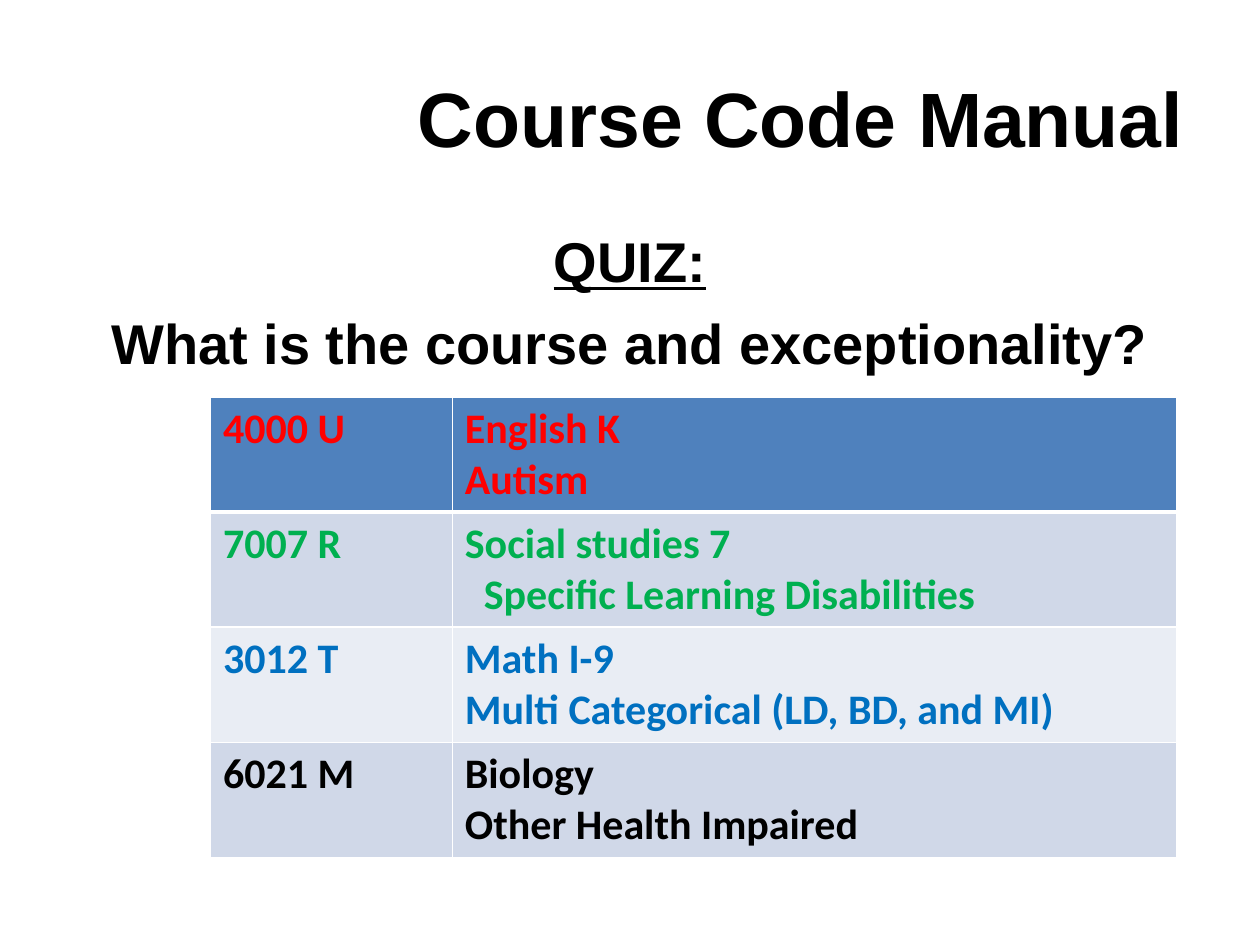
import pptx
import pptx.dml.color
import pptx.enum.text
import pptx.oxml
import pptx.oxml.ns
import pptx.util
from pptx.util import Inches, Pt

TITLE = "Course Code Manual"
QUESTION = ["QUIZ:", "What is the course and exceptionality?"]
# code, course, exceptionality, text colour, fill, indent of the exceptionality
ANSWERS = [
    ("4000 U", "English K", "Autism", "FF0000", "4F81BD", 0),
    ("7007 R", "Social studies 7", "Specific Learning Disabilities", "00B050", "D0D8E8", 0.15),
    ("3012 T", "Math I-9", "Multi Categorical (LD, BD, and MI)", "0070C0", "E9EDF4", 0),
    ("6021 M", "Biology", "Other Health Impaired", "000000", "D0D8E8", 0),
]
COLUMN_WIDTHS = [1.92, 5.75]
ROW_HEIGHT = 0.91

THEME = {
    "heading_font": "Arial", "table_font": "Calibri",
    "text": "000000", "border": "FFFFFF",
    "title_size": 44, "body_size": 32, "table_size": 24,
    "border_width": 1, "header_border_width": 3,
}
ALIGN = pptx.enum.text.PP_ALIGN


def place(shape, left, top, width, height):
    shape.left, shape.top = Inches(left), Inches(top)
    shape.width, shape.height = Inches(width), Inches(height)


def format_runs(paragraph, font_name, size, color):
    for run in paragraph.runs:
        run.font.name = font_name
        run.font.size = Pt(size)
        run.font.bold = True
        run.font.color.rgb = pptx.dml.color.RGBColor.from_string(color)


def set_borders(cell, widths):
    """Draw the cell's edges; widths maps L, R, T and B, in that order, to points."""
    properties = cell._tc.get_or_add_tcPr()
    namespace = pptx.oxml.ns.nsdecls("a")
    for position, (side, width) in enumerate(widths.items()):
        properties.insert(position, pptx.oxml.parse_xml(
            f'<a:ln{side} {namespace} w="{Pt(width)}"><a:solidFill>'
            f'<a:srgbClr val="{THEME["border"]}"/></a:solidFill></a:ln{side}>'))


def add_title(slide):
    title = slide.shapes.title
    place(title, 0.5, 0.3, 9, 1.25)
    title.text_frame.text = TITLE
    title.text_frame.vertical_anchor = pptx.enum.text.MSO_ANCHOR.MIDDLE
    paragraph = title.text_frame.paragraphs[0]
    paragraph.alignment = ALIGN.RIGHT
    format_runs(paragraph, THEME["heading_font"], THEME["title_size"], THEME["text"])


def add_question(slide):
    body = slide.placeholders[1]
    place(body, 0.5, 1.75, 9, 4.95)
    body.text_frame.text = "\n".join(QUESTION)
    for index, paragraph in enumerate(body.text_frame.paragraphs):
        properties = paragraph._p.get_or_add_pPr()
        properties.set("marL", "0")
        properties.set("indent", "0")
        properties.append(pptx.oxml.parse_xml(f'<a:buNone {pptx.oxml.ns.nsdecls("a")}/>'))
        paragraph.alignment = ALIGN.CENTER
        paragraph.space_before = Pt(8 if index else 0)
        format_runs(paragraph, THEME["heading_font"], THEME["body_size"], THEME["text"])
    body.text_frame.paragraphs[0].runs[0].font.underline = True


def add_answers(slide):
    table = slide.shapes.add_table(
        len(ANSWERS), len(COLUMN_WIDTHS), Inches(1.67), Inches(3.15),
        Inches(sum(COLUMN_WIDTHS)), Inches(ROW_HEIGHT * len(ANSWERS))).table
    for column, width in zip(table.columns, COLUMN_WIDTHS):
        column.width = Inches(width)
    thin, thick = THEME["border_width"], THEME["header_border_width"]
    for index, (code, course, exceptionality, color, fill, indent) in enumerate(ANSWERS):
        table.rows[index].height = Inches(ROW_HEIGHT)
        widths = {"L": thin, "R": thin,
                  "T": thick if index == 1 else thin,
                  "B": thick if index == 0 else thin}
        for cell, text in zip(table.rows[index].cells, (code, f"{course}\n{exceptionality}")):
            cell.text_frame.text = text
            cell.fill.solid()
            cell.fill.fore_color.rgb = pptx.dml.color.RGBColor.from_string(fill)
            set_borders(cell, widths)
            for paragraph in cell.text_frame.paragraphs:
                format_runs(paragraph, THEME["table_font"], THEME["table_size"], color)
        if indent:
            properties = paragraph._p.get_or_add_pPr()
            properties.set("marL", str(Inches(indent)))


def main():
    presentation = pptx.Presentation()
    presentation.slide_width, presentation.slide_height = Inches(10), Inches(7.5)
    slide = presentation.slides.add_slide(presentation.slide_layouts[1])
    add_title(slide)
    add_question(slide)
    add_answers(slide)
    presentation.save("out.pptx")


if __name__ == "__main__":
    main()
